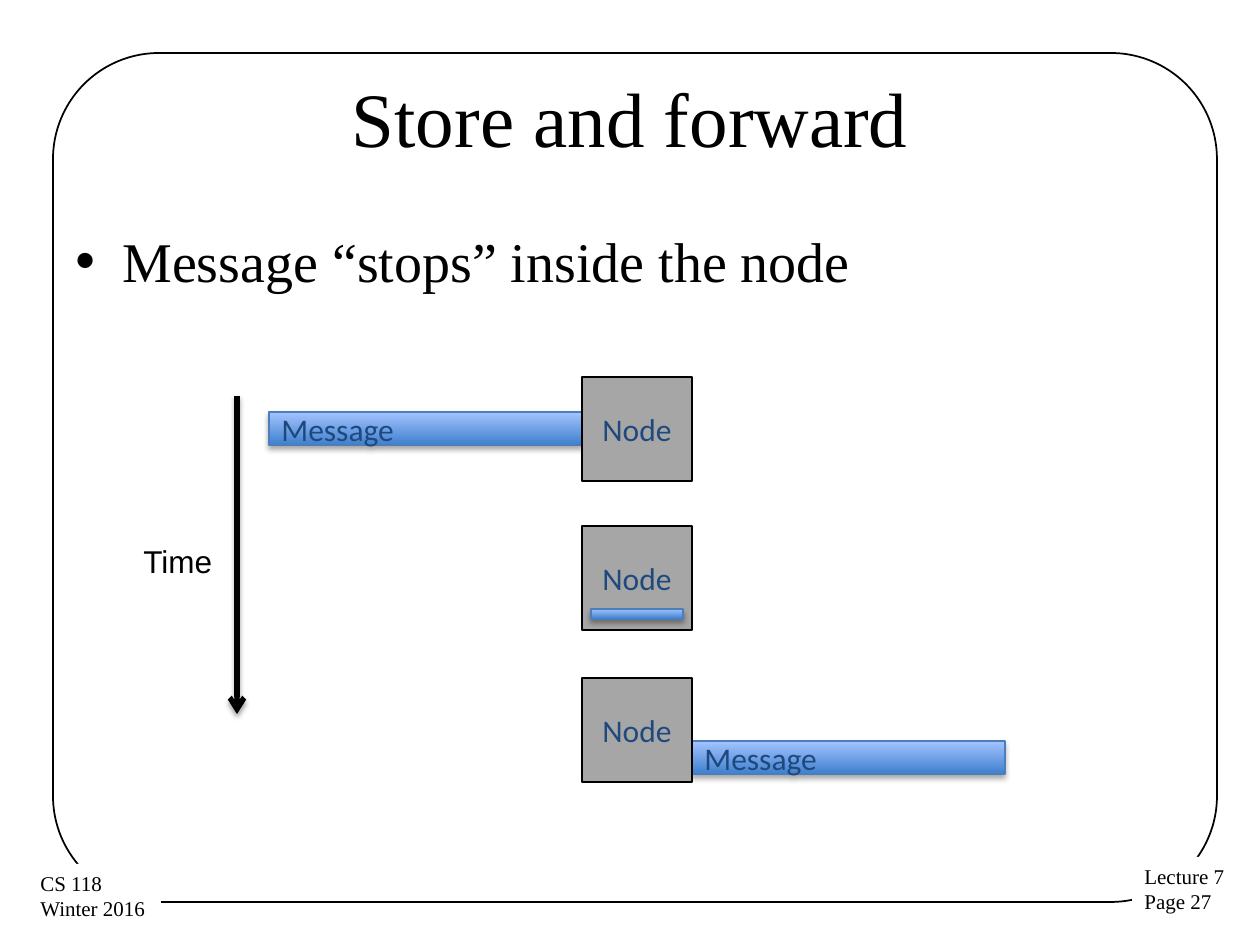
from lxml import etree
from pptx import Presentation
from pptx.dml.color import RGBColor
from pptx.enum.shapes import MSO_CONNECTOR, MSO_SHAPE
from pptx.enum.text import MSO_ANCHOR, MSO_AUTO_SIZE, PP_ALIGN
from pptx.oxml import parse_xml
from pptx.oxml.ns import nsdecls, qn
from pptx.util import Emu, Pt

PX = 914400 / 126
RECT, ROUND = MSO_SHAPE.RECTANGLE, MSO_SHAPE.ROUNDED_RECTANGLE
LEFT, CENTER = PP_ALIGN.LEFT, PP_ALIGN.CENTER
TOP, MIDDLE = MSO_ANCHOR.TOP, MSO_ANCHOR.MIDDLE
GROW, FIXED = MSO_AUTO_SIZE.SHAPE_TO_FIT_TEXT, MSO_AUTO_SIZE.NONE
STRAIGHT = MSO_CONNECTOR.STRAIGHT

BLACK = RGBColor(0x00, 0x00, 0x00)
WHITE = RGBColor(0xFF, 0xFF, 0xFF)
GRAY = RGBColor(0xA6, 0xA6, 0xA6)
NAVY = RGBColor(0x1F, 0x49, 0x7D)
EDGE = RGBColor(0x4B, 0x7E, 0xBC)
DEEP = RGBColor(0x3F, 0x80, 0xCE)
PALE = RGBColor(0xA4, 0xC4, 0xFF)
SERIF, SANS, LABEL = "Times New Roman", "Arial", "Calibri"

NODE_X, NODE_W, NODE_H = 582, 110, 104
NODE_TOPS = (377, 526, 678)
BAR_W, BAR_H = 313, 33


def px(*nums):
    return [Emu(round(n * PX)) for n in nums]


def write(shape, text, font=SERIF, size=12, color=BLACK, align=LEFT,
          anchor=TOP, wrap=True, fit=FIXED):
    frame = shape.text_frame
    frame.text = text
    frame.word_wrap = wrap
    frame.auto_size = fit
    frame.vertical_anchor = anchor
    for para in frame.paragraphs:
        para.alignment = align
        para.font.name = font
        para.font.size = Pt(size)
        para.font.color.rgb = color
    return frame


def add_box(slide, area, fill=None, line=None, width=0.75, kind=RECT):
    shape = slide.shapes.add_shape(kind, *px(*area))
    if fill is None:
        shape.fill.background()
    else:
        shape.fill.solid()
        shape.fill.fore_color.rgb = fill
    if line is None:
        shape.line.fill.background()
    else:
        shape.line.color.rgb = line
        shape.line.width = Pt(width)
    shape.shadow.inherit = False
    return shape


def add_shadow(props, alpha, dist):
    old = props.find(qn("a:effectLst"))
    if old is not None:
        props.remove(old)
    props.append(parse_xml(
        f'<a:effectLst {nsdecls("a")}><a:outerShdw blurRad="{Pt(3.1)}" '
        f'dist="{Pt(dist)}" dir="5400000" rotWithShape="0">'
        f'<a:srgbClr val="{BLACK}"><a:alpha val="{alpha * 1000}"/></a:srgbClr>'
        '</a:outerShdw></a:effectLst>'))


def add_bar(slide, area, text=None):
    bar = add_box(slide, area, line=EDGE)
    bar.fill.gradient()
    bar.fill.gradient_angle = 90
    for stop, color in zip(bar.fill.gradient_stops, (DEEP, PALE)):
        stop.color.rgb = color
    for stop, spot in zip(bar.fill.gradient_stops, (0, 1)):
        stop.position = spot
    add_shadow(bar.element.spPr, 35, 1.8)
    if text:
        write(bar, text, font=LABEL, size=18, color=NAVY, anchor=MIDDLE)


def add_node(slide, top):
    node = add_box(slide, (NODE_X, top, NODE_W, NODE_H), GRAY, BLACK)
    write(node, "Node", font=LABEL, size=18, color=NAVY, align=CENTER,
          anchor=MIDDLE)


def add_arrow(slide, x, top, end):
    arrow = slide.shapes.add_connector(STRAIGHT, *px(x, top, x, end))
    arrow.line.color.rgb = BLACK
    arrow.line.width = Pt(3)
    etree.SubElement(arrow.line._get_or_add_ln(), qn("a:tailEnd"), type="arrow")
    add_shadow(arrow.element.spPr, 38, 1.6)


def add_tag(slide, area, text):
    write(add_box(slide, area, WHITE), text, wrap=False, fit=GROW)


def add_bullet(slide, area, text):
    frame = write(slide.shapes.add_textbox(*px(*area)), text, size=32)
    props = frame.paragraphs[0]._p.get_or_add_pPr()
    indent = px(47)[0]
    props.set("marL", str(indent))
    props.set("indent", str(-indent))
    space = etree.SubElement(etree.SubElement(props, qn("a:spcBef")),
                             qn("a:spcPct"))
    space.set("val", "20000")
    etree.SubElement(props, qn("a:buFont"), typeface=SANS)
    etree.SubElement(props, qn("a:buChar"), char="•")
    props.append(props.find(qn("a:defRPr")))


def set_title(slide, area, text):
    title = slide.shapes.title
    title.left, title.top, title.width, title.height = px(*area)
    write(title, text, size=44, align=CENTER, anchor=MIDDLE)


def main():
    deck = Presentation()
    deck.slide_width, deck.slide_height = px(1260, 945)
    slide = deck.slides.add_slide(deck.slide_layouts[5])

    frame = add_box(slide, (53, 53, 1164, 849), line=BLACK, width=1, kind=ROUND)
    frame.adjustments[0] = 0.125
    add_tag(slide, (1132, 857, 106, 64), "Lecture 7\nPage 27")
    add_tag(slide, (28, 864, 133, 64), "CS 118\nWinter 2016")
    set_title(slide, (63, 38, 1134, 157), "Store and forward")
    add_bullet(slide, (63, 220, 1134, 624), "Message “stops” inside the node")

    add_bar(slide, (NODE_X - BAR_W, 412, BAR_W, BAR_H), "Message")
    add_bar(slide, (NODE_X + NODE_W, 741, BAR_W, BAR_H), "Message")
    add_arrow(slide, 237, 396, 714)
    time = slide.shapes.add_textbox(*px(131, 536, 94, 50))
    write(time, "Time", font=SANS, size=18, wrap=False, fit=GROW)
    for top in NODE_TOPS:
        add_node(slide, top)
    add_bar(slide, (591, 609, 92, 10))

    deck.save("out.pptx")


if __name__ == "__main__":
    main()
